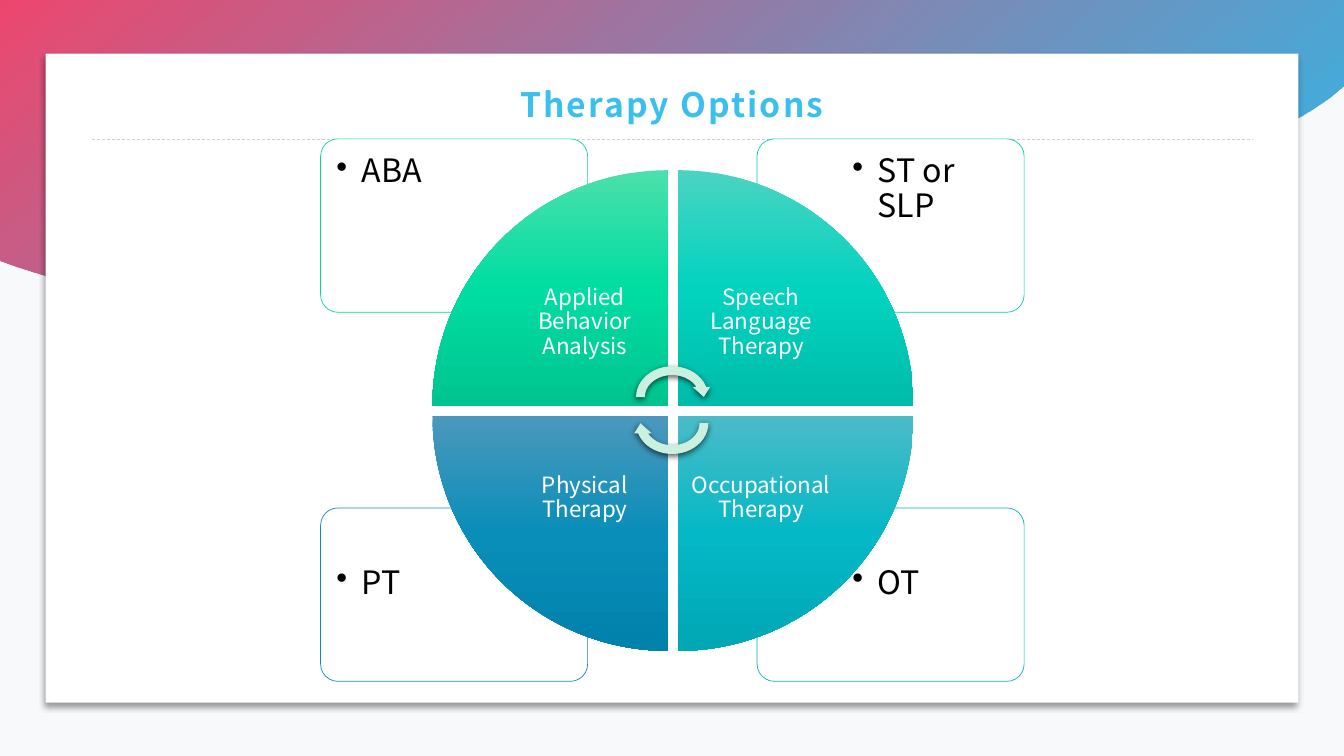
from pptx import Presentation
from pptx.dml.color import RGBColor
from pptx.enum.dml import MSO_LINE
from pptx.enum.shapes import MSO_CONNECTOR, MSO_SHAPE
from pptx.enum.text import MSO_ANCHOR, MSO_AUTO_SIZE, PP_ALIGN
from pptx.oxml import parse_xml
from pptx.oxml.ns import nsdecls, qn
from pptx.oxml.xmlchemy import OxmlElement
from pptx.util import Cm, Pt

TITLE = "Therapy Options"
FONT = "Noto Sans CJK JP"
THERAPIES = [
    {"name": "Occupational Therapy", "short": "OT", "col": 1, "row": 1, "turn": 180,
     "line": "0EB0BD", "shades": ("4BBBC8", "05B8C6", "00A7B4")},
    {"name": "Physical Therapy", "short": "PT", "col": 0, "row": 1, "turn": 270,
     "line": "118AB1", "shades": ("4C98BC", "098EB9", "0182AC")},
    {"name": "Speech Language Therapy", "short": "ST or SLP", "col": 1, "row": 0, "turn": 90,
     "line": "0BC9B7", "shades": ("4BD3C2", "01D3BF", "00BCAA")},
    {"name": "Applied Behavior Analysis", "short": "ABA", "col": 0, "row": 0, "turn": 0,
     "line": "07D69F", "shades": ("4BE0AB", "00DDA2", "00C490")},
]
WAVE_START = (0, 6.55)
WAVE_CURVES = [
    ((3.1, 7.72), (6.76, 7.9), (9.98, 6.96)),
    ((13.46, 5.97), (16.46, 3.84), (20.12, 3.45)),
    ((23.77, 3.07), (27.64, 4.57), (31.17, 3.61)),
    ((32.18, 3.33), (33.12, 2.82), (33.87, 2.16)),
]
W, H = 33.87, 19.05
BOX_X, BOX_Y, BOX_W, BOX_H = (8.08, 19.08), (3.5, 12.8), 6.73, 4.37
NOTE_X, NOTE_Y, NOTE_W, NOTE_H = (8.18, 21.18), (3.61, 13.97), 4.52, 3.07
WEDGE_X, WEDGE_Y, WEDGE = (10.9, 17.09), (4.29, 10.47), 5.93
LABEL = 4.18
INSET = 0.3


def rgb(value):
    return RGBColor.from_string(value)


def apply(obj, values):
    for key, value in values.items():
        setattr(obj, key, value)


def cm(*values):
    return [Cm(v) for v in values]


def gradient(sp, stops, angle):
    sp.fill.background()
    gs = "".join(
        f'<a:gs pos="{pos * 1000}"><a:srgbClr val="{color}">'
        f'<a:alpha val="{alpha * 1000}"/></a:srgbClr></a:gs>'
        for pos, color, alpha in stops)
    grad = parse_xml(
        f'<a:gradFill {nsdecls("a")} rotWithShape="0"><a:gsLst>{gs}</a:gsLst>'
        f'<a:lin ang="{angle * 60000}" scaled="0"/></a:gradFill>')
    sp_pr = sp.element.spPr
    sp_pr.replace(sp_pr.find(qn("a:noFill")), grad)


def shape(kind, box, fill=None, line=None, turn=0):
    sp = s.shapes.add_shape(kind, *cm(*box))
    apply(sp, {"rotation": turn})
    sp.shadow.inherit = False
    if fill:
        sp.fill.solid()
        sp.fill.fore_color.rgb = rgb(fill)
    if line:
        sp.line.color.rgb = rgb(line)
        sp.line.width = Pt(0.5)
    else:
        sp.line.fill.background()
    return sp


def shadow(sp, alpha, blur, dist):
    sp.element.spPr.find(qn("a:effectLst")).append(parse_xml(
        f'<a:outerShdw {nsdecls("a")} blurRad="{Pt(blur)}" dist="{Pt(dist)}" '
        f'dir="5400000" algn="ctr" rotWithShape="0"><a:srgbClr val="000000">'
        f'<a:alpha val="{alpha * 1000}"/></a:srgbClr></a:outerShdw>'))


def write(sp, text, size, color, align, anchor, inset, bold=False):
    tf = sp.text_frame
    apply(tf, {"word_wrap": True, "auto_size": MSO_AUTO_SIZE.NONE, "vertical_anchor": anchor,
               **{f"margin_{side}": Cm(inset) for side in ("left", "right", "top", "bottom")}})
    p = tf.paragraphs[0]
    apply(p, {"alignment": align, "line_spacing": 0.9, "space_before": Pt(0)})
    r = p.add_run()
    r.text = text
    apply(r.font, {"name": FONT, "size": Pt(size), "bold": bold})
    r.font.color.rgb = rgb(color)
    return p, r


def bullet(p):
    p_pr = p._p.get_or_add_pPr()
    p_pr.set("marL", str(Cm(0.64)))
    p_pr.set("indent", str(-Cm(0.64)))
    bu = OxmlElement("a:buChar")
    bu.set("char", "•")
    p_pr.append(bu)


def bezier(points, t):
    weights = ((1 - t) ** 3, 3 * t * (1 - t) ** 2, 3 * t * t * (1 - t), t ** 3)
    return tuple(sum(w * pt[i] for w, pt in zip(weights, points)) for i in (0, 1))


def wave():
    outline, start, steps = [WAVE_START], WAVE_START, 24
    for curve in WAVE_CURVES:
        outline += [bezier((start, *curve), n / steps) for n in range(1, steps + 1)]
        start = curve[-1]
    fb = s.shapes.build_freeform(0, 0, scale=1.0)
    fb.add_line_segments([cm(x, y) for x, y in outline + [(W, 0)]], close=True)
    sp = fb.convert_to_shape()
    sp.shadow.inherit = False
    sp.line.fill.background()
    gradient(sp, [(0, "EE476E", 100), (100, "16B3E8", 90)], 50)


prs = Presentation()
apply(prs, {"slide_width": Cm(W), "slide_height": Cm(H)})
s = prs.slides.add_slide(prs.slide_layouts[5])
s.background.fill.solid()
s.background.fill.fore_color.rgb = rgb("F8F9FB")

wave()
panel = shape(MSO_SHAPE.RECTANGLE, (1.15, 1.35, 31.57, 16.36), "FFFFFF")
shadow(panel, 40, 4, 3)
rule = s.shapes.add_connector(MSO_CONNECTOR.STRAIGHT, *cm(2.33, 3.5, 31.57, 3.5))
apply(rule.line, {"width": Pt(0.5), "dash_style": MSO_LINE.DASH})
rule.line.color.rgb = rgb("D0CECE")
rule.element.spPr.append(OxmlElement("a:effectLst"))

title = s.shapes.title
apply(title, dict(zip(("left", "top", "width", "height"), cm(2.33, 1.88, 29.21, 1.63))))
_, r = write(title, TITLE, 24, "3BC0ED", PP_ALIGN.CENTER, MSO_ANCHOR.MIDDLE, 0.13, True)
r._r.get_or_add_rPr().set("spc", "150")
s.shapes.element.append(title.element)

for t in THERAPIES:
    col, row = t["col"], t["row"]
    sp = shape(MSO_SHAPE.ROUNDED_RECTANGLE, (BOX_X[col], BOX_Y[row], BOX_W, BOX_H),
               "FFFFFF", t["line"])
    sp.adjustments[0] = 0.1
    note = s.shapes.add_textbox(*cm(NOTE_X[col], NOTE_Y[row], NOTE_W, NOTE_H))
    p, _ = write(note, t["short"], 23, "000000", PP_ALIGN.LEFT, MSO_ANCHOR.TOP, INSET)
    bullet(p)

for t in reversed(THERAPIES):
    x, y = WEDGE_X[t["col"]], WEDGE_Y[t["row"]]
    sp = shape(MSO_SHAPE.PIE_WEDGE, (x, y, WEDGE, WEDGE), turn=t["turn"])
    gradient(sp, [(50 * n, color, 100) for n, color in enumerate(t["shades"])], 90)
    label_x = x + (WEDGE - LABEL) * (1 - t["col"])
    label_y = y + (WEDGE - LABEL) * (1 - t["row"])
    label = s.shapes.add_textbox(*cm(label_x, label_y, LABEL, LABEL))
    write(label, t["name"], 16, "FFFFFF", PP_ALIGN.CENTER, MSO_ANCHOR.MIDDLE, INSET)

for y, turn in ((9.12, 0), (9.78, 180)):
    arrow = shape(MSO_SHAPE.CIRCULAR_ARROW, (15.92, y, 2.04, 1.77), "CCF0DF", turn=turn)
    shadow(arrow, 63, 4.5, 1.5)

prs.save("out.pptx")
